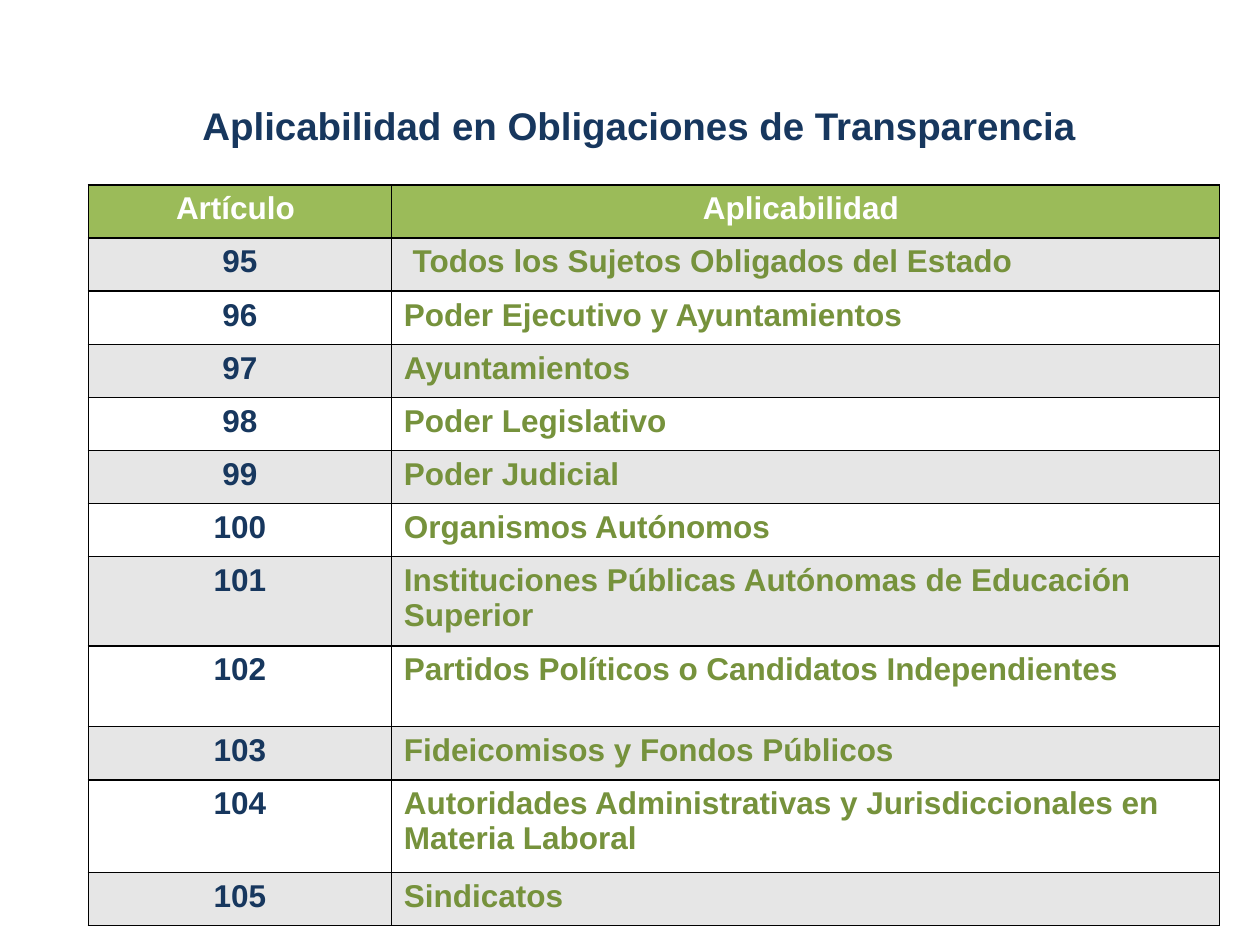
import dataclasses

import lxml.etree
import pptx
import pptx.dml.color
import pptx.enum.text
import pptx.oxml.ns
import pptx.util

Cm = pptx.util.Cm
Align = pptx.enum.text.PP_ALIGN


@dataclasses.dataclass(frozen=True)
class Theme:
    font: str = "Arial"
    title_size: int = 22
    table_size: int = 18
    navy: str = "17375E"
    green: str = "9BBB59"
    olive: str = "76923C"
    gray: str = "E6E6E6"
    white: str = "FFFFFF"
    border: str = "000000"
    border_width: int = 1


theme = Theme()


def write(frame, text, size, color, align):
    para = frame.paragraphs[0]
    para.alignment = align
    span = para.add_run()
    span.text = text
    span.font.name = theme.font
    span.font.size = pptx.util.Pt(size)
    span.font.bold = True
    span.font.color.rgb = pptx.dml.color.RGBColor.from_string(color)


def add_borders(cell):
    properties = cell._tc.get_or_add_tcPr()
    qn = pptx.oxml.ns.qn
    for side in ("a:lnL", "a:lnR", "a:lnT", "a:lnB"):
        line = lxml.etree.SubElement(properties, qn(side))
        line.set("w", str(pptx.util.Pt(theme.border_width)))
        fill = lxml.etree.SubElement(line, qn("a:solidFill"))
        lxml.etree.SubElement(fill, qn("a:srgbClr")).set("val", theme.border)


deck = pptx.Presentation()
deck.slide_width = Cm(25.4)
deck.slide_height = Cm(19.05)
page = deck.slides.add_slide(deck.slide_layouts[5])

title = page.shapes.title
title.left, title.top = Cm(2.51), Cm(1.93)
title.width, title.height = Cm(20.75), Cm(2)
title.text_frame.word_wrap = True
title.text_frame.vertical_anchor = pptx.enum.text.MSO_ANCHOR.TOP
write(title.text_frame, "Aplicabilidad en Obligaciones de Transparencia",
      theme.title_size, theme.navy, Align.CENTER)

row_height = 1.07
rows = [
    ("Artículo ", "Aplicabilidad ", row_height),
    ("95", " Todos los Sujetos Obligados del Estado", row_height),
    ("96", "Poder Ejecutivo y Ayuntamientos", row_height),
    ("97", "Ayuntamientos", row_height),
    ("98", "Poder Legislativo", row_height),
    ("99", "Poder Judicial", row_height),
    ("100", "Organismos Autónomos", row_height),
    ("101", "Instituciones Públicas Autónomas de Educación Superior", 1.8),
    ("102", "Partidos Políticos o Candidatos Independientes", 1.63),
    ("103", "Fideicomisos y Fondos Públicos", row_height),
    ("104", "Autoridades Administrativas y Jurisdiccionales en Materia Laboral", 1.87),
    ("105", "Sindicatos", row_height),
]
column_widths = (6.11, 16.69)

table = page.shapes.add_table(
    len(rows), len(column_widths), Cm(1.78), Cm(3.73),
    Cm(sum(column_widths)), Cm(sum(row[2] for row in rows))).table
for column, width in zip(table.columns, column_widths):
    column.width = Cm(width)

for row_index, (article, scope, height) in enumerate(rows):
    table.rows[row_index].height = Cm(height)
    if row_index == 0:
        fill_color = theme.green
        styles = [(theme.white, Align.CENTER)] * 2
    else:
        fill_color = theme.gray if row_index % 2 else theme.white
        styles = [(theme.navy, Align.CENTER), (theme.olive, Align.LEFT)]
    for column_index, text in enumerate((article, scope)):
        cell = table.cell(row_index, column_index)
        add_borders(cell)
        cell.fill.solid()
        cell.fill.fore_color.rgb = pptx.dml.color.RGBColor.from_string(fill_color)
        write(cell.text_frame, text, theme.table_size, *styles[column_index])

deck.save("out.pptx")
